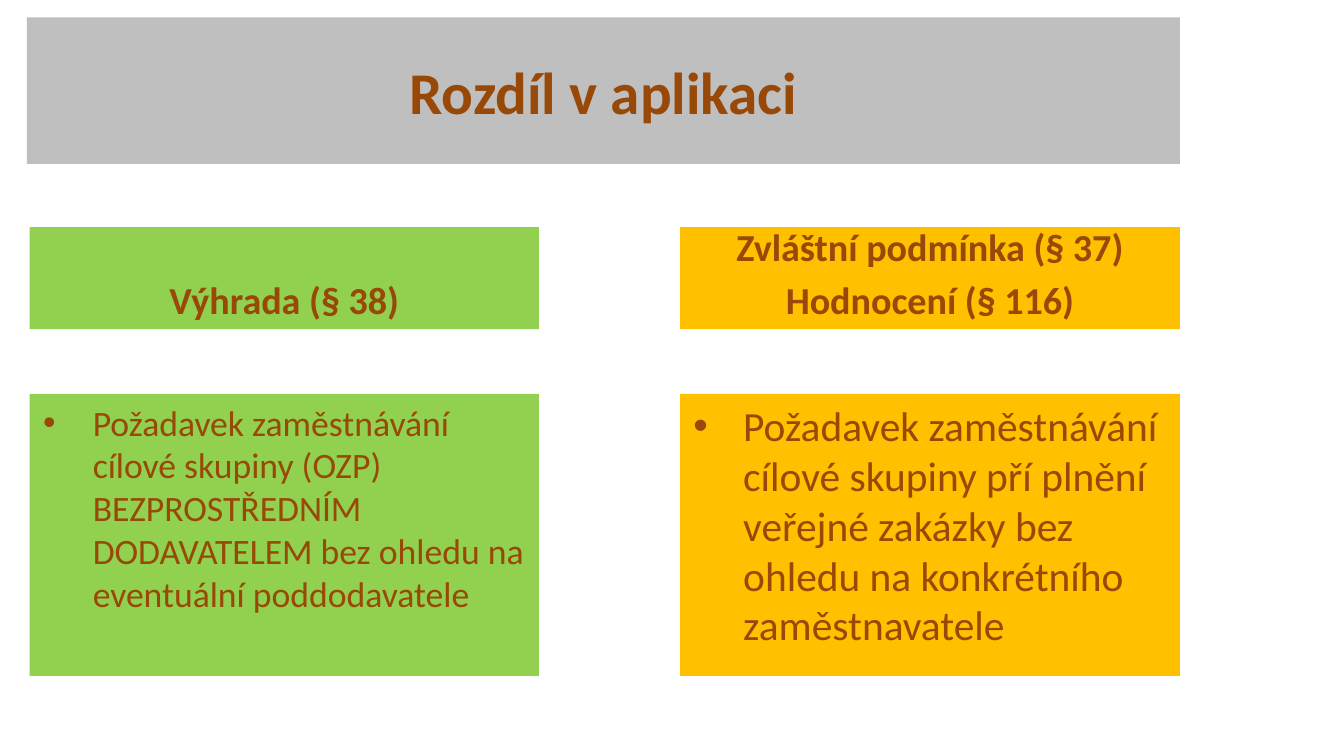
from pptx import Presentation
from pptx.dml.color import RGBColor
from pptx.enum import text
from pptx.util import Inches, Pt

TITLE = "Rozdíl v aplikaci"
BROWN, GREY = "984807", "BFBFBF"
COLUMNS = [
    {"left": 0.22, "width": 3.79, "fill": "92D050", "size": 19.1,
     "heading": ["Výhrada (§ 38)"],
     "body": ["Požadavek zaměstnávání cílové skupiny (OZP) BEZPROSTŘEDNÍM "
              "DODAVATELEM bez ohledu na eventuální poddodavatele"]},
    {"left": 5.06, "width": 3.72, "fill": "FFC000", "size": 22.2,
     "heading": ["Zvláštní podmínka (§ 37)", "Hodnocení (§ 116)"],
     "body": ["Požadavek zaměstnávání cílové skupiny pří plnění veřejné "
              "zakázky bez ohledu na konkrétního zaměstnavatele"]},
]
HEADING_TOP, HEADING_HEIGHT = 1.69, 0.76
BODY_TOP, BODY_HEIGHT = 2.93, 2.1
HEADING_SIZE = 20.4
BULLET_INDENT = Inches(0.37)


def color(value):
    return RGBColor.from_string(value)


def fill_box(box, area, fill, lines, size, anchor, bold=False, bulleted=False):
    box.left, box.top, box.width, box.height = map(Inches, area)
    box.fill.solid()
    box.fill.fore_color.rgb = color(fill)
    frame = box.text_frame
    frame.text = "\n".join(lines)
    frame.word_wrap = True
    frame.auto_size = text.MSO_AUTO_SIZE.NONE
    frame.vertical_anchor = anchor
    for index, para in enumerate(frame.paragraphs):
        para.space_before = Pt(round(size * 0.2, 1)) if index else Pt(0)
        if bulleted:
            properties = para._p.get_or_add_pPr()
            properties.set("marL", str(BULLET_INDENT))
            properties.set("indent", str(-BULLET_INDENT))
        else:
            para.alignment = text.PP_ALIGN.CENTER
        for span in para.runs:
            span.font.name = "Calibri"
            span.font.size = Pt(size)
            span.font.bold = bold
            span.font.color.rgb = color(BROWN)


deck = Presentation()
deck.slide_width, deck.slide_height = Inches(10), Inches(10 * 9 / 16)
comparison = deck.slide_layouts.get_by_name("Comparison")
page = deck.slides.add_slide(comparison)
title, *boxes = list(page.placeholders)[:5]

fill_box(title, (0.2, 0.13, 8.58, 1.09), GREY, [TITLE], 31.7,
         text.MSO_ANCHOR.MIDDLE, bold=True)
for column, heading, body in zip(COLUMNS, boxes[::2], boxes[1::2]):
    left, width, fill = column["left"], column["width"], column["fill"]
    fill_box(heading, (left, HEADING_TOP, width, HEADING_HEIGHT), fill,
             column["heading"], HEADING_SIZE, text.MSO_ANCHOR.BOTTOM, bold=True)
    fill_box(body, (left, BODY_TOP, width, BODY_HEIGHT), fill,
             column["body"], column["size"], text.MSO_ANCHOR.TOP, bulleted=True)

deck.save("out.pptx")
